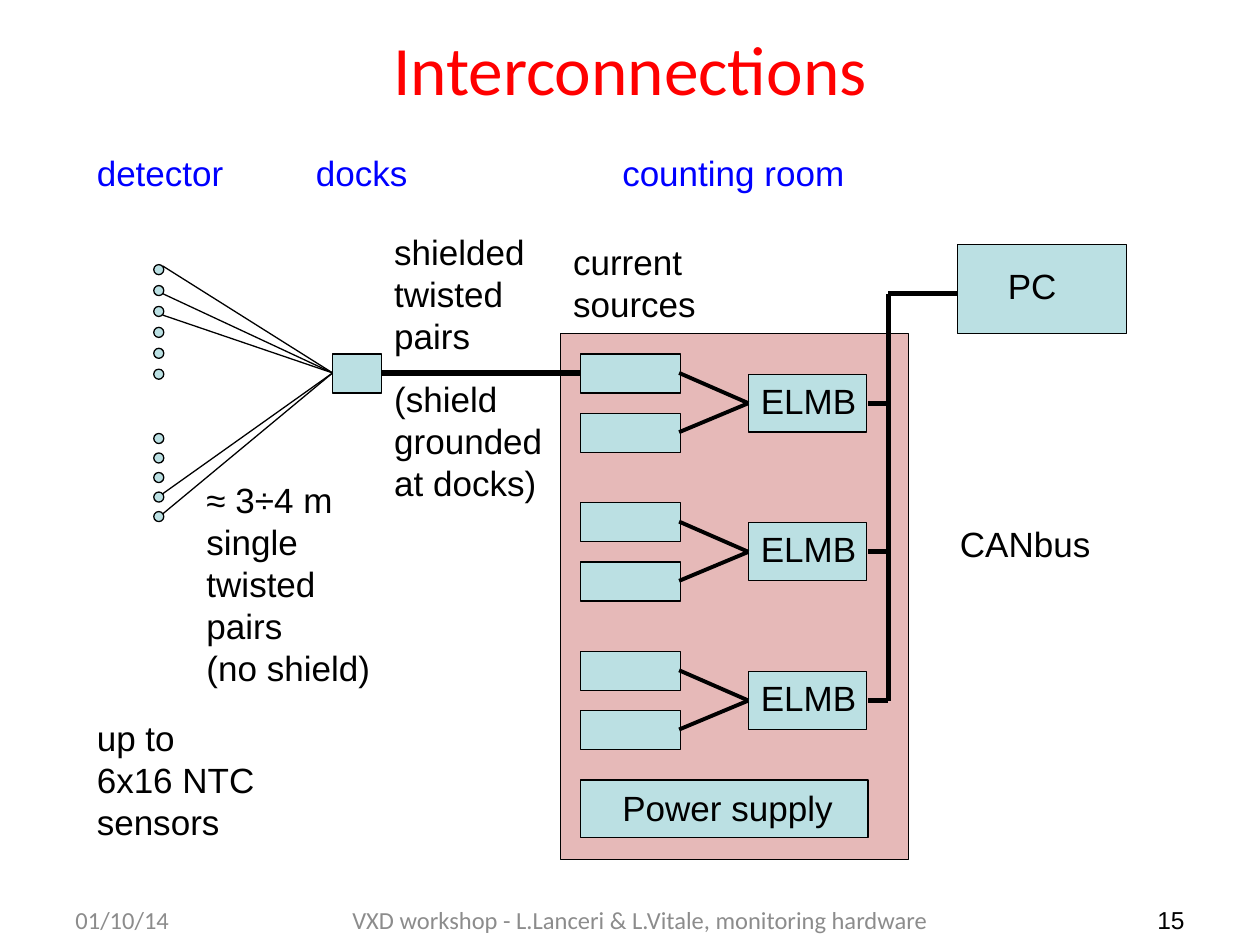
from dataclasses import dataclass

from lxml import etree
from pptx import Presentation
from pptx.dml.color import RGBColor
from pptx.enum.shapes import MSO_CONNECTOR, MSO_SHAPE
from pptx.enum.text import MSO_ANCHOR, PP_ALIGN
from pptx.oxml.ns import qn
from pptx.util import Inches, Pt

RECT, OVAL = MSO_SHAPE.RECTANGLE, MSO_SHAPE.OVAL
STRAIGHT = MSO_CONNECTOR.STRAIGHT
LEFT, CENTER, RIGHT = PP_ALIGN.LEFT, PP_ALIGN.CENTER, PP_ALIGN.RIGHT
MIDDLE = MSO_ANCHOR.MIDDLE

BLACK = RGBColor(0x00, 0x00, 0x00)
RED = RGBColor(0xFF, 0x00, 0x00)
BLUE = RGBColor(0x00, 0x00, 0xFF)
GRAY = RGBColor(0x8C, 0x8C, 0x8C)
PINK = RGBColor(0xE6, 0xB9, 0xB8)
TEAL = RGBColor(0xBB, 0xE0, 0xE3)

THIN, MEDIUM, THICK = 0.75, 2.25, 3


@dataclass
class Label:
    text: str
    x: float
    y: float
    w: float
    h: float = 0.44
    color: RGBColor = BLACK


@dataclass
class Footer:
    text: str
    x: float
    w: float
    align: PP_ALIGN
    font: str = "Calibri"
    color: RGBColor = GRAY


LABELS = [
    Label("detector", 0.67, 1.15, 1.23, color=BLUE),
    Label("docks", 2.41, 1.15, 0.93, color=BLUE),
    Label("counting room", 4.84, 1.15, 1.98, color=BLUE),
    Label("up to\n6x16 NTC\nsensors", 0.67, 5.64, 1.46, 1.11),
    Label("PC", 7.9, 2.05, 0.59),
    Label("CANbus", 7.52, 4.1, 1.25),
    Label("Power supply", 4.84, 6.19, 1.89),
    Label("≈ 3÷4 m\nsingle\ntwisted\npairs\n(no shield)", 1.54, 3.75, 1.51, 1.78),
    Label("shielded\ntwisted\npairs", 3.03, 1.78, 1.25, 1.11),
    Label("(shield\ngrounded\nat docks)", 3.03, 2.95, 1.39, 1.11),
    Label("current\nsources", 4.45, 1.86, 1.18, 0.77),
]
FOOTERS = [
    Footer("01/10/14", 0.5, 1.62, LEFT),
    Footer("VXD workshop - L.Lanceri & L.Vitale, monitoring hardware",
           2.12, 5.92, CENTER),
    Footer("15", 8.22, 1.28, RIGHT, "Arial", BLACK),
]

SENSOR_X, SENSOR_SIZE = 1.22, 0.08
SENSOR_GROUPS = [(2.1, 0.166, 6), (3.44, 0.155, 5)]  # top, pitch, count
WIRE_STARTS = [2.11, 2.33, 2.5, 3.92, 4.08]
DOCK_LEFT, DOCK_RIGHT, CABLE_Y = 2.64, 3.03, 2.96
SOURCE_LEFT, SOURCE_RIGHT, SOURCE_PITCH = 4.61, 5.39, 0.47
ELMB_LEFT, ELMB_RIGHT = 5.94, 6.89
BUS_X, BUS_TOP, PC_LEFT = 7.05, 2.33, 7.6
UNIT_TOPS = [2.81 + 1.18 * i for i in range(3)]
SOURCE_MID, ELMB_MID = 0.15, 0.39  # below the top of a unit


def set_font(p, name: str, size: float, color: RGBColor) -> None:
    p.font.name = name
    p.font.size = Pt(size)
    p.font.color.rgb = color


def add_box(s, x: float, y: float, w: float, h: float,
            fill: RGBColor = TEAL, kind: MSO_SHAPE = RECT) -> None:
    sp = s.shapes.add_shape(kind, Inches(x), Inches(y), Inches(w), Inches(h))
    sp.shadow.inherit = False
    sp.fill.solid()
    sp.fill.fore_color.rgb = fill
    sp.line.color.rgb = BLACK
    sp.line.width = Pt(THIN)


def add_wire(s, x1: float, y1: float, x2: float, y2: float,
             width: float) -> None:
    wire = s.shapes.add_connector(
        STRAIGHT, Inches(x1), Inches(y1), Inches(x2), Inches(y2))
    wire.line.color.rgb = BLACK
    wire.line.width = Pt(width)
    etree.SubElement(wire._element.spPr, qn("a:effectLst"))


def add_label(s, label: Label) -> None:
    sp = s.shapes.add_textbox(Inches(label.x), Inches(label.y),
                              Inches(label.w), Inches(label.h))
    tf = sp.text_frame
    tf.word_wrap = False
    tf.text = label.text
    for p in tf.paragraphs:
        set_font(p, "Arial", 20, label.color)


def add_footer(s, footer: Footer) -> None:
    sp = s.shapes.add_textbox(Inches(footer.x), Inches(7.1),
                              Inches(footer.w), Inches(0.4))
    tf = sp.text_frame
    tf.word_wrap = True
    tf.vertical_anchor = MIDDLE
    tf.text = footer.text
    p = tf.paragraphs[0]
    p.alignment = footer.align
    set_font(p, footer.font, 14, footer.color)


def add_title(s) -> None:
    sp = s.shapes.title
    sp.left, sp.top = Inches(0.5), Inches(0.14)
    sp.width, sp.height = Inches(9), Inches(0.8)
    tf = sp.text_frame
    tf.text = "Interconnections"
    tf.vertical_anchor = MIDDLE
    p = tf.paragraphs[0]
    p.alignment = CENTER
    set_font(p, "Calibri", 39.6, RED)


def add_detector(s) -> None:
    """Draw the sensors, the dock and the wires between them."""
    for top, pitch, count in SENSOR_GROUPS:
        for i in range(count):
            add_box(s, SENSOR_X, top + i * pitch, SENSOR_SIZE, SENSOR_SIZE,
                    kind=OVAL)
    add_box(s, DOCK_LEFT, 2.81, 0.39, 0.31)
    for y in WIRE_STARTS:
        add_wire(s, 1.29, y, DOCK_LEFT, CABLE_Y, THIN)


def add_unit(s, top: float) -> None:
    """Draw two current sources, their ELMB and its link to the bus."""
    elmb_y = top + ELMB_MID
    add_box(s, ELMB_LEFT, top + 0.16, 0.94, 0.46)
    for y in (top, top + SOURCE_PITCH):
        add_box(s, SOURCE_LEFT, y, 0.79, 0.31)
        add_wire(s, SOURCE_RIGHT, y + SOURCE_MID, ELMB_LEFT, elmb_y, MEDIUM)
    add_wire(s, ELMB_RIGHT, elmb_y, BUS_X, elmb_y, THICK)
    add_label(s, Label("ELMB", ELMB_LEFT, top + 0.15, 0.97))


def main() -> None:
    prs = Presentation()
    prs.slide_width, prs.slide_height = Inches(10), Inches(7.5)
    s = prs.slides.add_slide(prs.slide_layouts[5])

    add_title(s)
    add_box(s, 4.45, 2.65, 2.76, 4.17, PINK)
    add_detector(s)
    add_wire(s, DOCK_RIGHT, CABLE_Y, SOURCE_LEFT, CABLE_Y, THICK)
    for top in UNIT_TOPS:
        add_unit(s, top)
    add_box(s, SOURCE_LEFT, 6.19, 2.28, 0.46)
    add_box(s, PC_LEFT, 1.94, 1.34, 0.71)
    add_wire(s, BUS_X, UNIT_TOPS[-1] + ELMB_MID, BUS_X, BUS_TOP, THICK)
    add_wire(s, BUS_X, BUS_TOP, PC_LEFT, BUS_TOP, THICK)
    for label in LABELS:
        add_label(s, label)
    for footer in FOOTERS:
        add_footer(s, footer)

    prs.save("out.pptx")


if __name__ == "__main__":
    main()
